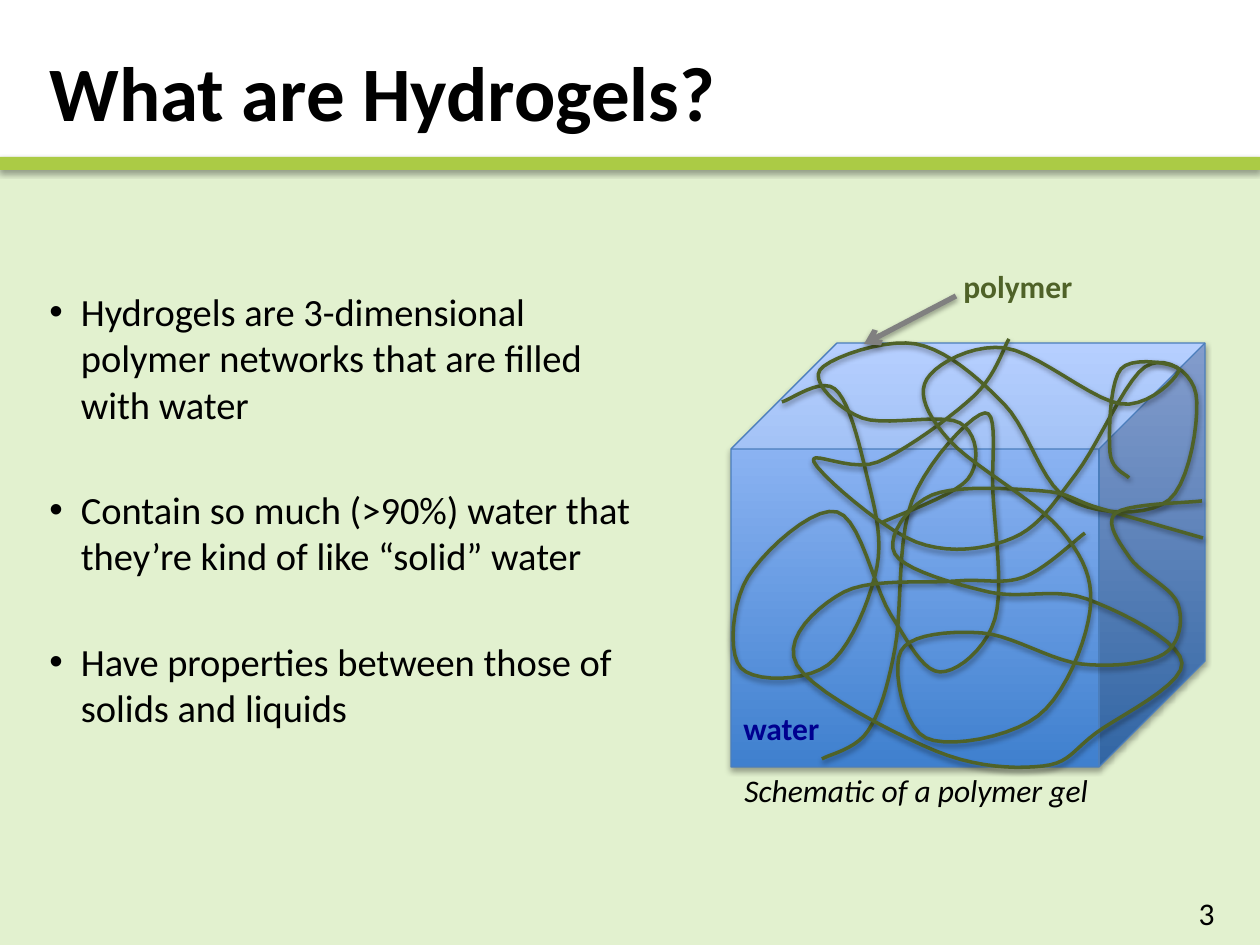
from lxml import etree
from pptx import Presentation
from pptx.dml.color import RGBColor
from pptx.enum.shapes import MSO_CONNECTOR as Connector, MSO_SHAPE as Shape
from pptx.enum.text import MSO_ANCHOR as Anchor, PP_ALIGN as Align
from pptx.oxml.ns import qn
from pptx.util import Pt

PX = 914400 / 126
FONT = "Calibri"
COLORS = {
    "page": "E2F1CF", "header": "FFFFFF", "band": "ABCB45", "text": "000000",
    "cube_bottom": "3F80CE", "cube_top": "A4C4FF", "cube_edge": "4B7EBC",
    "polymer": "4F6228", "water": "000090", "arrow": "808080",
}
BULLETS = [
    "Hydrogels are 3-dimensional polymer networks that are filled with water",
    "Contain so much (>90%) water that they’re kind of like “solid” water",
    "Have properties between those of solids and liquids",
]
# Points that each polymer strand passes through, in px
STRANDS = [
    [(782, 402), (835, 389), (866, 472), (877, 567), (828, 665), (741, 668), (748, 577),
     (837, 512), (891, 615), (940, 672), (995, 619), (993, 493), (985, 413), (912, 501),
     (895, 649), (868, 731), (822, 759)],
    [(881, 523), (968, 479), (960, 423), (862, 418), (820, 370), (916, 344), (1004, 404),
     (1068, 499), (1169, 500), (1196, 394), (1145, 367), (1076, 474), (1013, 538),
     (916, 542), (814, 462), (878, 462), (974, 396), (1009, 339)],
    [(1203, 538), (1099, 508), (1043, 491), (932, 495), (895, 554), (989, 592),
     (1087, 599), (1182, 663), (1096, 733), (1043, 766), (936, 751), (797, 665),
     (844, 592), (956, 581), (1024, 577), (1085, 533)],
    [(1202, 501), (1116, 513), (1130, 558), (1178, 604), (1164, 654), (1081, 664),
     (982, 633), (901, 651), (926, 738), (1038, 716), (1090, 611), (1061, 530),
     (949, 440), (927, 379), (1005, 348), (1121, 404), (1179, 370), (1121, 369),
     (1110, 452), (1129, 478)],
]


def px(*lengths):
    return [round(length * PX) for length in lengths]


def color(name):
    return RGBColor.from_string(COLORS[name])


def set_line(shape, name, width):
    shape.line.color.rgb = color(name)
    shape.line.width = Pt(width)


def add_shadow(shape, distance=23000, alpha=35000):
    properties = shape._element.spPr
    effects = properties.find(qn("a:effectLst"))
    if effects is None:
        effects = etree.SubElement(properties, qn("a:effectLst"))
    shadow = etree.SubElement(effects, qn("a:outerShdw"), blurRad="40000",
                              dist=str(distance), dir="5400000", rotWithShape="0")
    tone = etree.SubElement(shadow, qn("a:srgbClr"), val="000000")
    etree.SubElement(tone, qn("a:alpha"), val=str(alpha))


def add_bar(page, top, height, name):
    bar = page.shapes.add_shape(Shape.RECTANGLE, *px(0, top, 1260, height))
    bar.shadow.inherit = False
    bar.fill.solid()
    bar.fill.fore_color.rgb = color(name)
    bar.line.fill.background()
    add_shadow(bar)


def add_cube(page):
    cube = page.shapes.add_shape(Shape.CUBE, *px(731, 343, 474, 424))
    cube.shadow.inherit = False
    cube.fill.gradient()
    cube.fill.gradient_angle = 90
    for stop, name in zip(cube.fill.gradient_stops, ("cube_bottom", "cube_top")):
        stop.color.rgb = color(name)
    set_line(cube, "cube_edge", 0.75)
    add_shadow(cube)


def smooth(points, steps=10):
    """Sample a Catmull-Rom curve through the points."""
    padded = [points[0], *points, points[-1]]
    curve = [points[0]]
    for a, b, c, d in zip(padded, padded[1:], padded[2:], padded[3:]):
        for step in range(1, steps + 1):
            t = step / steps
            curve.append(tuple(
                q + t / 2 * (r - p + t * (2 * p - 5 * q + 4 * r - s
                                          + t * (3 * (q - r) + s - p)))
                for p, q, r, s in zip(a, b, c, d)))
    return [px(*point) for point in curve]


def add_strand(page, points):
    start, *rest = smooth(points)
    builder = page.shapes.build_freeform(*start)
    builder.add_line_segments(rest, close=False)
    strand = builder.convert_to_shape()
    strand.shadow.inherit = False
    strand.fill.background()
    set_line(strand, "polymer", 2)
    add_shadow(strand, 20000, 38000)


def add_arrow(page, start, end):
    arrow = page.shapes.add_connector(Connector.STRAIGHT, *px(*start, *end))
    set_line(arrow, "arrow", 3)
    line = arrow._element.spPr.find(qn("a:ln"))
    etree.SubElement(line, qn("a:tailEnd"), type="arrow")
    add_shadow(arrow, 20000, 38000)


def add_bullet(para):
    properties = para._p.get_or_add_pPr()
    properties.set("marL", "228600")
    properties.set("indent", "-228600")
    etree.SubElement(properties, qn("a:buFont"), typeface="Arial")
    etree.SubElement(properties, qn("a:buChar"), char="•")


def add_text(page, at, texts, size, name="text", bold=False, italic=False,
             wrap=True, align=Align.LEFT, anchor=Anchor.TOP, bullet=False):
    box = page.shapes.add_textbox(*px(*at))
    frame = box.text_frame
    frame.word_wrap = wrap
    frame.vertical_anchor = anchor
    for index, text in enumerate(texts):
        para = frame.add_paragraph() if index else frame.paragraphs[0]
        para.alignment = align
        if index:
            para.space_before = Pt(34)
        if bullet:
            add_bullet(para)
        span = para.add_run()
        span.text = text
        font = span.font
        font.name, font.size, font.bold, font.italic = FONT, Pt(size), bold, italic
        font.color.rgb = color(name)


def main():
    deck = Presentation()
    deck.slide_width, deck.slide_height = px(1260, 945)
    page = deck.slides.add_slide(deck.slide_layouts[6])
    page.background.fill.solid()
    page.background.fill.fore_color.rgb = color("page")

    # Header
    add_bar(page, 0, 157, "header")
    add_bar(page, 157, 13, "band")

    # Title, bullets and page number
    add_text(page, (37, 38, 1191, 105), ["What are Hydrogels?"], 44, bold=True,
             anchor=Anchor.MIDDLE)
    add_text(page, (37, 282, 631, 590), BULLETS, 22, bullet=True)
    add_text(page, (1150, 888, 77, 50), ["3"], 18, align=Align.RIGHT)

    # Gel schematic
    add_cube(page)
    for points in STRANDS:
        add_strand(page, points)
    add_text(page, (732, 765, 381, 50), ["Schematic of a polymer gel"], 18,
             italic=True, wrap=False)
    add_text(page, (731, 703, 103, 50), ["water"], 18, "water", bold=True, wrap=False)
    add_text(page, (951, 261, 136, 50), ["polymer"], 18, "polymer", bold=True, wrap=False)
    add_arrow(page, (956, 296), (864, 344))

    deck.save("out.pptx")


if __name__ == "__main__":
    main()
